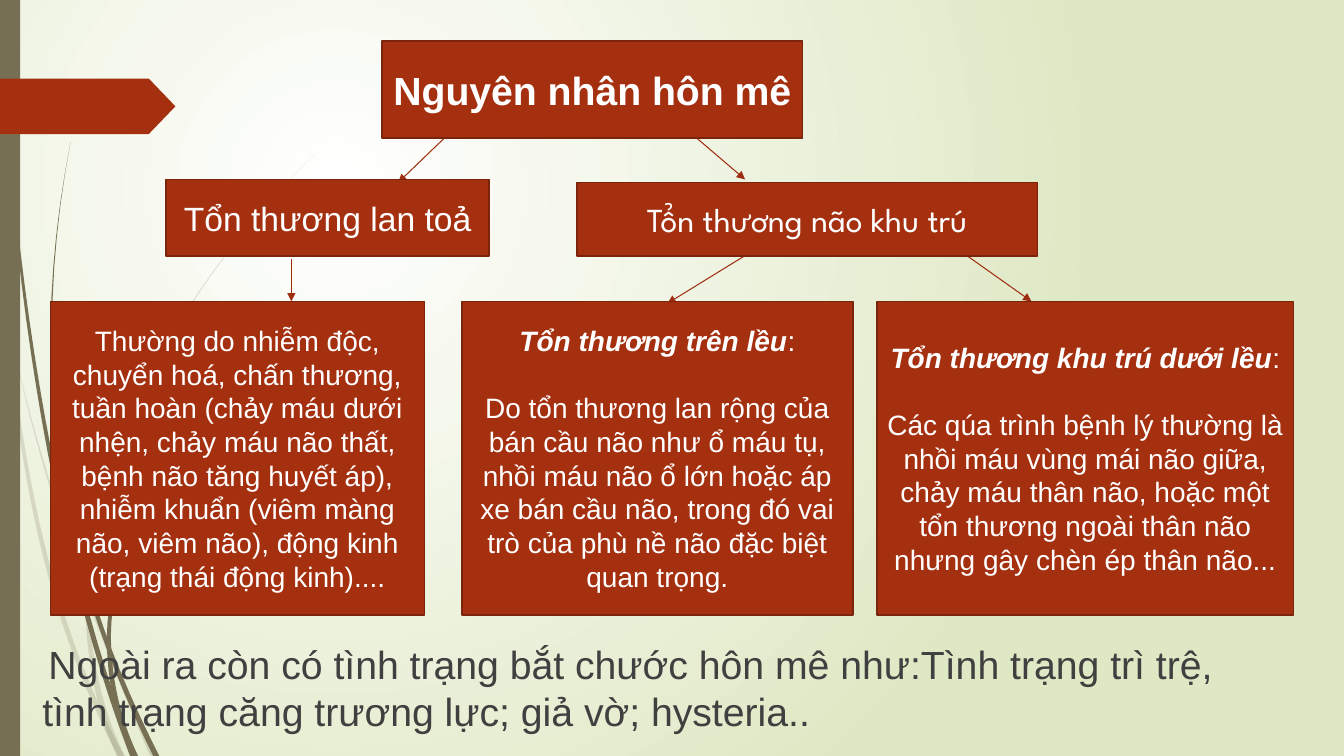
"""Build the slide on the causes of coma as a tree of boxes over a leafy background."""
from lxml.etree import SubElement
from pptx import Presentation
from pptx.dml.color import RGBColor
from pptx.enum.shapes import MSO_CONNECTOR, MSO_SHAPE
from pptx.enum.text import MSO_ANCHOR, MSO_AUTO_SIZE, PP_ALIGN
from pptx.oxml.ns import qn
from pptx.util import Inches, Pt

RUST = RGBColor(0xA5, 0x30, 0x10)
RUST_EDGE = RGBColor(0x7A, 0x24, 0x0C)
RUST_ARROW = RGBColor(0x9E, 0x2E, 0x0F)
OLIVE = RGBColor(0x76, 0x6F, 0x54)
PALE_GREEN = RGBColor(0xDF, 0xE8, 0xC4)
WHITE = RGBColor(0xFF, 0xFF, 0xFF)
DARK_GREY = RGBColor(0x40, 0x40, 0x40)

SLIDE_WIDTH, SLIDE_HEIGHT = 13.33, 7.5
BRANCH_SIZE, LEAF_SIZE = 24, 20
LEAF_TOP, LEAF_HEIGHT = 2.99, 3.11
STEM_STEPS = 24


def write(paragraph, text, size=LEAF_SIZE, font="Arial", color=WHITE, bold=False,
          italic=False, align=PP_ALIGN.CENTER):
    paragraph.alignment = align
    run = paragraph.add_run()
    run.text = text
    run.font.size = Pt(size)
    run.font.name = font
    run.font.color.rgb = color
    run.font.bold = bold
    run.font.italic = italic


def paint(shape, color, edge=None):
    shape.shadow.inherit = False
    shape.fill.solid()
    shape.fill.fore_color.rgb = color
    if edge is None:
        shape.line.fill.background()
    else:
        shape.line.color.rgb = edge
        shape.line.width = Pt(1.25)


deck = Presentation()
deck.slide_width, deck.slide_height = Inches(SLIDE_WIDTH), Inches(SLIDE_HEIGHT)
slide = deck.slides.add_slide(deck.slide_layouts[1])
heading, remark = slide.placeholders

backdrop = slide.background.fill
backdrop.gradient()
for stop, color in zip(backdrop.gradient_stops, (WHITE, PALE_GREEN)):
    stop.color.rgb = color
gradient = slide.element.find(".//" + qn("a:gradFill"))
gradient.remove(gradient.find(qn("a:lin")))
glow = SubElement(gradient, qn("a:path"), path="circle")
SubElement(glow, qn("a:fillToRect"), l="50000", t="50000", r="100000", b="100000")

# Each stem: Bezier tip, two bends and root, then its width at the tip and at the root.
faint_stems = [
    ((0, 2.9), (0.2, 4), (0.25, 5.7), (1.2, 7.5), 0.02, 0.06),
    ((0.14, 3.45), (0.45, 4.9), (0.95, 6.2), (1.52, 7.5), 0, 0.06),
    ((3.12, 1.53), (2.2, 2.4), (0.9, 4.2), (0.86, 5.85), 0, 0.03),
    ((0.86, 5.85), (0.86, 6.5), (1, 7.1), (1.2, 7.5), 0.03, 0.08),
]
dark_stems = [
    ((0.03, 0), (0.05, 2.3), (0.5, 5.4), (1.32, 7.5), 0.01, 0.06),
    ((0.7, 1.41), (0.2, 4), (0.75, 5.9), (1.55, 7.5), 0, 0.06),
    ((2.6, 3.44), (1.9, 4.1), (1.1, 5.2), (1.08, 6.31), 0, 0.04),
    ((1.08, 6.31), (1.08, 6.8), (1.2, 7.2), (1.34, 7.5), 0.04, 0.06),
]
for stems, opacity in ((faint_stems, 20), (dark_stems, 100)):
    plant = slide.shapes.add_group_shape()
    for tip, upper_bend, lower_bend, root, tip_width, root_width in stems:
        left_side, right_side = [], []
        for step in range(STEM_STEPS + 1):
            t = step / STEM_STEPS
            x, y = [(1 - t) ** 3 * a + 3 * (1 - t) ** 2 * t * b
                    + 3 * (1 - t) * t ** 2 * c + t ** 3 * d
                    for a, b, c, d in zip(tip, upper_bend, lower_bend, root)]
            half_width = (tip_width + (root_width - tip_width) * t) / 2
            left_side.append((Inches(x - half_width), Inches(y)))
            right_side.append((Inches(x + half_width), Inches(y)))
        outline = plant.shapes.build_freeform(*left_side[0])
        outline.add_line_segments(left_side[1:] + right_side[::-1], close=True)
        stem = outline.convert_to_shape()
        paint(stem, OLIVE)
        if opacity < 100:
            tint = stem.element.spPr.find(qn("a:solidFill"))[0]
            SubElement(tint, qn("a:alpha"), val=str(opacity * 1000))

edge_band = slide.shapes.add_shape(MSO_SHAPE.RECTANGLE, 0, 0,
                                   Inches(0.2), Inches(SLIDE_HEIGHT))
paint(edge_band, OLIVE)
page_tab = slide.shapes.add_shape(MSO_SHAPE.PENTAGON, 0, Inches(0.78),
                                  Inches(1.74), Inches(0.55))
page_tab.adjustments[0] = 0.48
paint(page_tab, RUST)

arrows = {
    "heading to diffuse": (4.48, 1.3, 3.95, 1.81),
    "heading to focal": (6.84, 1.31, 7.39, 1.78),
    "diffuse to its causes": (2.89, 2.57, 2.89, LEAF_TOP),
    "focal to upper lesion": (7.61, 2.4, 6.62, 3.01),
    "focal to lower lesion": (9.37, 2.38, 10.23, LEAF_TOP),
}
for ends in arrows.values():
    arrow = slide.shapes.add_connector(MSO_CONNECTOR.STRAIGHT, *map(Inches, ends))
    arrow.line.color.rgb = RUST_ARROW
    arrow.line.width = Pt(0.75)
    arrow_format = arrow.element.spPr
    SubElement(arrow_format.find(qn("a:ln")), qn("a:tailEnd"), type="triangle")
    SubElement(arrow_format, qn("a:effectLst"))

for placeholder in (remark, heading):
    slide.shapes.element.append(placeholder.element)
    placeholder.text_frame.word_wrap = True
    placeholder.text_frame.auto_size = MSO_AUTO_SIZE.NONE

remark.left, remark.top = Inches(0.32), Inches(6.3)
remark.width, remark.height = Inches(12.5), Inches(1.2)
remark.text_frame.vertical_anchor = MSO_ANCHOR.TOP
remark_line = remark.text_frame.paragraphs[0]
remark_format = remark_line._p.get_or_add_pPr()
remark_format.set("marL", "0")
remark_format.set("indent", str(Inches(0.06)))
SubElement(remark_format, qn("a:buNone"))
remark_line.space_before = Pt(0)
write(remark_line, "Ngoài ra còn có tình trạng bắt chước hôn mê như:Tình trạng trì trệ, "
      "tình trạng căng trương lực; giả vờ; hysteria..",
      size=28, color=DARK_GREY, align=PP_ALIGN.LEFT)

heading.left, heading.top = Inches(3.79), Inches(0.41)
heading.width, heading.height = Inches(4.17), Inches(0.96)
heading.text_frame.vertical_anchor = MSO_ANCHOR.MIDDLE
paint(heading, RUST, edge=RUST_EDGE)
write(heading.text_frame.paragraphs[0], "Nguyên nhân hôn mê", size=28, bold=True)

branches = [
    (1.65, 1.78, 3.2, 0.76, BRANCH_SIZE, "Arial", "", "Tổn thương lan toả"),
    (5.72, 1.81, 4.57, 0.73, BRANCH_SIZE, "League Spartan", "", "Tổn thương não khu trú"),
]
leaves = [
    (0.5, 3.71, "",
     "Thường do nhiễm độc, chuyển hoá, chấn thương, tuần hoàn (chảy máu dưới nhện, "
     "chảy máu não thất, bệnh não tăng huyết áp), nhiễm khuẩn (viêm màng não, viêm não), "
     "động kinh (trạng thái động kinh)...."),
    (4.58, 3.88, "Tổn thương trên lều",
     "Do tổn thương lan rộng của bán cầu não như ổ máu tụ, nhồi máu não ổ lớn hoặc áp xe "
     "bán cầu não, trong đó vai trò của phù nề não đặc biệt quan trọng."),
    (8.7, 4.13, "Tổn thương khu trú dưới lều",
     "Các qúa trình bệnh lý thường là nhồi máu vùng mái não giữa, chảy máu thân não, "
     "hoặc một tổn thương ngoài thân não nhưng gây chèn ép thân não..."),
]
causes = branches + [(left, LEAF_TOP, width, LEAF_HEIGHT, LEAF_SIZE, "Arial", lesion, detail)
                     for left, width, lesion, detail in leaves]
for left, top, width, height, size, font, lesion, detail in causes:
    cause = slide.shapes.add_shape(MSO_SHAPE.RECTANGLE,
                                   *map(Inches, (left, top, width, height)))
    paint(cause, RUST, edge=RUST_EDGE)
    cause.text_frame.word_wrap = True
    cause.text_frame.vertical_anchor = MSO_ANCHOR.MIDDLE
    line = cause.text_frame.paragraphs[0]
    if lesion:
        write(line, lesion, bold=True, italic=True)
        write(line, ":")
        line = cause.text_frame.add_paragraph()
        line.space_before = Pt(24)
    write(line, detail, size=size, font=font)

deck.save("out.pptx")
